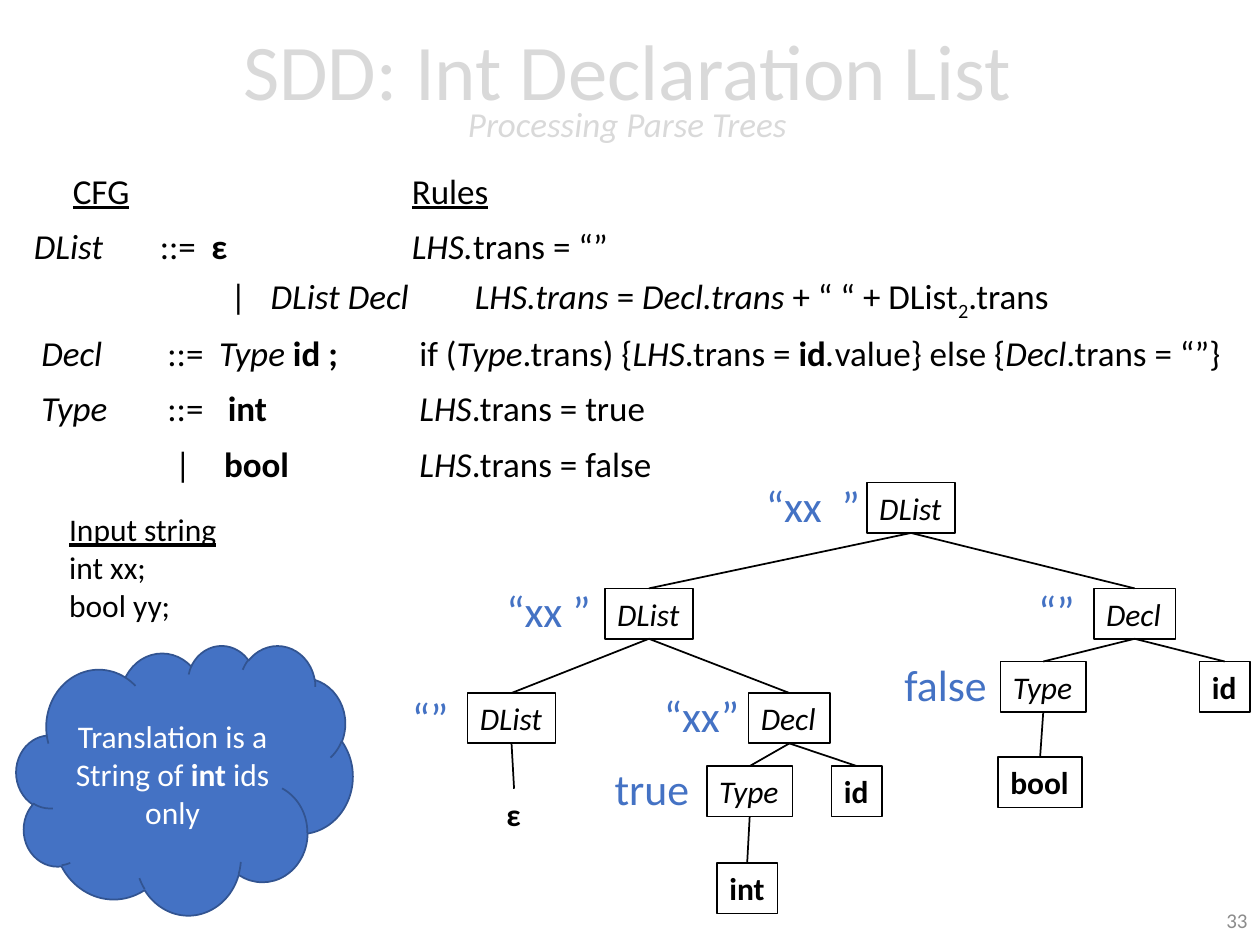
from lxml import etree
from pptx import Presentation
from pptx.dml.color import RGBColor
from pptx.enum.shapes import MSO_CONNECTOR, MSO_SHAPE
from pptx.enum.text import MSO_ANCHOR, PP_ALIGN
from pptx.oxml.ns import qn
from pptx.util import Inches, Pt

STRAIGHT = MSO_CONNECTOR.STRAIGHT
RECT, CLOUD = MSO_SHAPE.RECTANGLE, MSO_SHAPE.CLOUD
MIDDLE = MSO_ANCHOR.MIDDLE
CENTER, RIGHT = PP_ALIGN.CENTER, PP_ALIGN.RIGHT
FONT = "Calibri"
BLACK, WHITE, BLUE = "000000", "FFFFFF", "4472C4"
NODE_HEIGHT = 0.4

# Run styles: i italic, b bold, u underline, s subscript.
# Each row: space before (pt), tab stops (in), runs.
GRAMMAR = [
    (10, [0.31, 3], [("\t", ""), ("CFG", "u"), ("\t", ""), ("Rules", "u")]),
    (10, [1, 1.41, 3], [("DList", "i"), ("\t::=\t", ""), ("ε\t", "b"),
                        ("LHS.", "i"), ("trans = “”", "")]),
    (5, [1.56, 1.88, 3.5], [("\t|\t", ""), ("DList Decl\tLHS.trans ", "i"), ("= ", ""),
                            ("Decl.trans", "i"), (" + “ “ + DList", ""),
                            ("2", "s"), (".trans", "")]),
    (10, [0.06, 1.06, 1.47, 3.06], [("\tDecl", "i"), ("\t::=\t", ""), ("Type ", "i"),
                                    ("id ;\t", "b"), ("if (", ""), ("Type", "i"),
                                    (".trans) {", ""), ("LHS", "i"), (".trans = ", ""),
                                    ("id", "b"), (".", "i"), ("value} else {", ""),
                                    ("Decl", "i"), (".trans = “”}", "")]),
    (10, [0.06, 1.06, 1.54, 3.06], [("\tType", "i"), ("\t::=\t", ""), ("int\t", "b"),
                                    ("LHS", "i"), (".trans = true", "")]),
    (10, [1.12, 1.51, 3.06], [("\t|\t", ""), ("bool\t", "b"),
                              ("LHS", "i"), (".trans = false", "")]),
]

# Key: (label, style, left, top, width, parent key)
TREE = {
    "root": ("DList", "i", 6.88, 3.83, 0.7, None),
    "rest": ("DList", "i", 4.8, 4.67, 0.7, "root"),
    "decl_yy": ("Decl", "i", 8.68, 4.67, 0.65, "root"),
    "end": ("DList", "i", 3.71, 5.5, 0.7, "rest"),
    "decl_xx": ("Decl", "i", 5.94, 5.5, 0.65, "rest"),
    "type_yy": ("Type", "i", 7.94, 5.25, 0.68, "decl_yy"),
    "id_yy": ("id", "b", 9.52, 5.25, 0.4, "decl_yy"),
    "bool": ("bool", "b", 7.92, 6.01, 0.67, "type_yy"),
    "type_xx": ("Type", "i", 5.61, 6.08, 0.68, "decl_xx"),
    "id_xx": ("id", "b", 6.6, 6.08, 0.4, "decl_xx"),
    "int": ("int", "b", 5.69, 6.85, 0.48, "type_xx"),
    "epsilon": ("ε", "b", 3.92, 6.26, 0.32, "end"),
}

# Attribute value, left, top, width
TRANSLATIONS = [
    ("“xx  ”", 5.98, 3.75, 0.96),
    ("“xx ”", 3.92, 4.58, 0.88),
    ("“”", 8.14, 4.58, 0.5),
    ("“”", 3.17, 5.43, 0.5),
    ("“xx”", 5.17, 5.42, 0.81),
    ("false", 7.08, 5.17, 0.86),
    ("true", 4.78, 6, 0.8),
]


def rgb(color):
    return RGBColor.from_string(color)


def add_runs(p, runs, size, color=BLACK):
    for text, style in runs:
        r = p.add_run()
        r.text = text
        font = r.font
        font.name, font.size = FONT, Pt(size)
        font.color.rgb = rgb(color)
        font.bold, font.italic, font.underline = (k in style for k in "biu")
        if "s" in style:
            r._r.get_or_add_rPr().set("baseline", "-25000")


def add_paragraphs(tf, paragraphs, size, color=BLACK, align=None):
    for i, runs in enumerate(paragraphs):
        p = tf.add_paragraph() if i else tf.paragraphs[0]
        p.alignment = align
        add_runs(p, runs, size, color)


def add_text(slide, box, paragraphs, size, color=BLACK, align=None, anchor=None, wrap=False):
    sp = slide.shapes.add_textbox(*map(Inches, box))
    tf = sp.text_frame
    tf.word_wrap = wrap
    tf.vertical_anchor = anchor
    add_paragraphs(tf, paragraphs, size, color, align)
    return sp


def add_filled_shape(slide, kind, box, fill, line):
    sp = slide.shapes.add_shape(kind, *map(Inches, box))
    sp.shadow.inherit = False
    sp.fill.solid()
    sp.fill.fore_color.rgb = rgb(fill)
    sp.line.color.rgb = rgb(line)
    sp.line.width = Pt(1)
    return sp


def add_node(slide, label, style, box):
    sp = add_filled_shape(slide, RECT, box, WHITE, BLACK)
    sp.text_frame.word_wrap = False
    add_paragraphs(sp.text_frame, [[(label, style)]], 18, align=PP_ALIGN.LEFT)
    return sp


def add_branch(slide, parent, child):
    line = slide.shapes.add_connector(STRAIGHT, 0, 0, 0, 0)
    line.begin_connect(parent, 2)
    line.end_connect(child, 0)
    line.line.color.rgb = rgb(BLACK)
    line.line.width = Pt(1)
    etree.SubElement(line._element.spPr, qn("a:effectLst"))


def add_tree(slide):
    nodes = {}
    for key, (label, style, left, top, width, parent) in TREE.items():
        box = (left, top, width, NODE_HEIGHT)
        if key == "epsilon":
            nodes[key] = add_text(slide, box, [[(label, style)]], 18)
        else:
            nodes[key] = add_node(slide, label, style, box)
        if parent:
            add_branch(slide, nodes[parent], nodes[key])


def set_tab_stops(p, stops):
    tabs = etree.SubElement(p._p.get_or_add_pPr(), qn("a:tabLst"))
    for stop in stops:
        etree.SubElement(tabs, qn("a:tab"), pos=str(Inches(stop)), algn="l")


def add_grammar(slide):
    rows = [runs for _, _, runs in GRAMMAR]
    sp = add_text(slide, (0.17, 1.33, 9.67, 4.95), rows, 20, wrap=True)
    for p, (space, stops, _) in zip(sp.text_frame.paragraphs, GRAMMAR):
        p.line_spacing = 0.9
        p.space_before = Pt(space)
        set_tab_stops(p, stops)


def add_title(slide):
    color = "D9D9D9"
    sp = add_text(slide, (0.2, 0.03, 9.56, 1.45), [[("SDD: Int Declaration List", "")]],
                  45, color, CENTER, MIDDLE, wrap=True)
    p = sp.text_frame.paragraphs[0]
    p.line_spacing = 0.7
    p.add_line_break()
    add_runs(p, [("Processing Parse Trees", "i")], 20, color)


def add_callout(slide):
    sp = add_filled_shape(slide, CLOUD, (0.13, 5.12, 2.67, 2.14), BLUE, "325491")
    sp.text_frame.vertical_anchor = MIDDLE
    message = [[("Translation is a String of ", ""), ("int", "b"), (" ids", "")], [("only", "")]]
    add_paragraphs(sp.text_frame, message, 18, WHITE, CENTER)


def main():
    prs = Presentation()
    prs.slide_width, prs.slide_height = Inches(10), Inches(7.5)
    slide = prs.slides.add_slide(prs.slide_layouts[6])
    add_grammar(slide)
    add_text(slide, (0.45, 4, 1.38, 1.01),
             [[("Input string", "u")], [("int xx;", "")], [("bool yy;", "")]], 18)
    add_tree(slide)
    for value, left, top, width in TRANSLATIONS:
        add_text(slide, (left, top, width, 0.52), [[(value, "")]], 25, BLUE)
    add_callout(slide)
    add_text(slide, (7.75, 7.1, 2.25, 0.4), [[("33", "")]], 12, "8C8C8C",
             RIGHT, MIDDLE, wrap=True)
    add_title(slide)
    prs.save("out.pptx")


if __name__ == "__main__":
    main()
